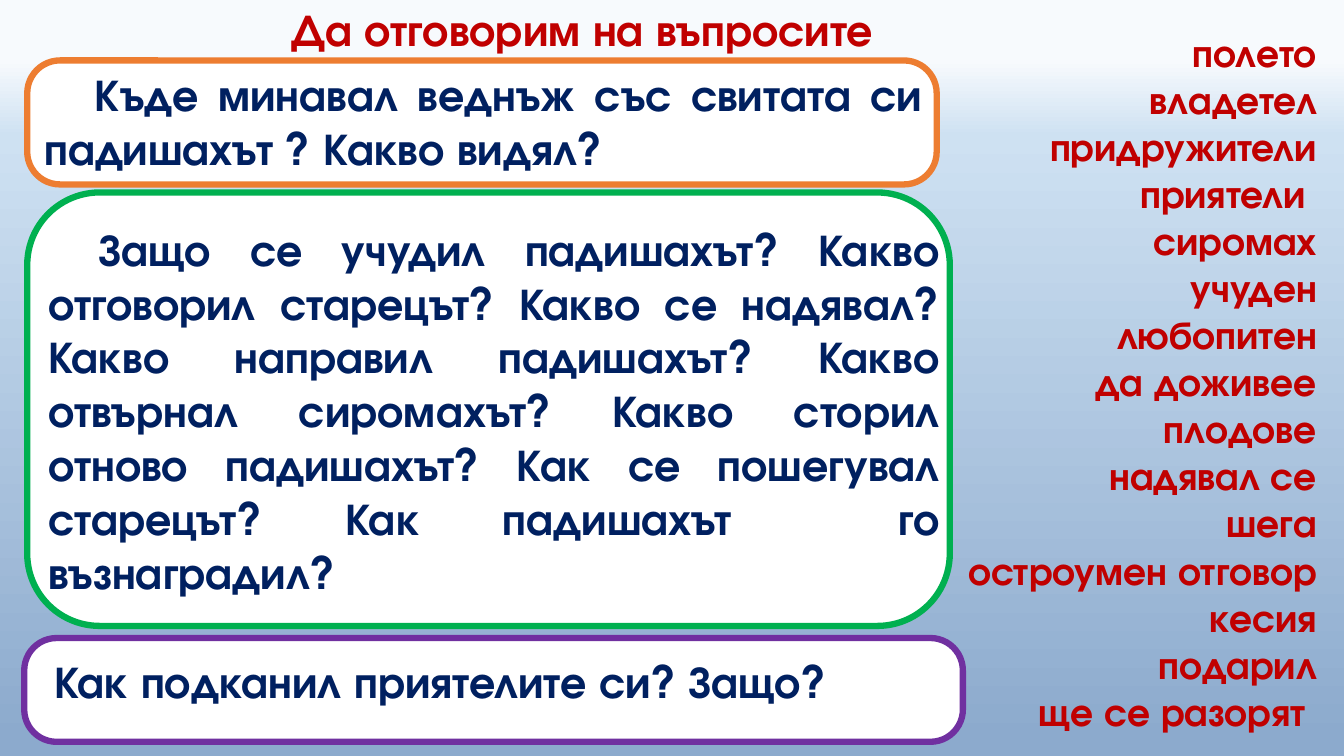
from lxml import etree
from pptx import Presentation
from pptx.dml.color import RGBColor
from pptx.enum.shapes import MSO_SHAPE
from pptx.enum.text import PP_ALIGN
from pptx.oxml.ns import qn
from pptx.util import Inches, Pt

FONT = "TeX Gyre Adventor"
RED = RGBColor(0xC0, 0x00, 0x00)
NAVY = RGBColor(0x00, 0x20, 0x60)
WHITE = RGBColor(0xFF, 0xFF, 0xFF)
ORANGE = RGBColor(0xED, 0x7D, 0x31)
GREEN = RGBColor(0x00, 0xB0, 0x50)
PURPLE = RGBColor(0x70, 0x30, 0xA0)
SKY = [(8, RGBColor(0xF7, 0xFA, 0xFD)),
       (18, RGBColor(0xCE, 0xE1, 0xF2)),
       (98, RGBColor(0x8C, 0xAA, 0xCD))]

TITLE = "Да отговорим на въпросите "

# frame box, corner, line colour, text box, alignment, question
QUESTIONS = [
    ((0.27, 0.6, 9.02, 1.23), 0.264, ORANGE, (0.34, 0.61, 8.91, 1.18),
     PP_ALIGN.JUSTIFY,
     "\tКъде минавал веднъж със свитата си падишахът ? Какво видял?"),
    ((0.27, 1.91, 9.15, 4.3), 0.167, GREEN, (0.38, 2.15, 9.04, 3.33),
     PP_ALIGN.JUSTIFY,
     "\tЗащо се учудил падишахът? Какво отговорил старецът? "
     "Какво се надявал? Какво направил падишахът? "
     "Какво отвърнал сиромахът? Какво сторил отново падишахът? "
     "Как се пошегувал старецът? Как падишахът  го възнаградил?"),
    ((0.24, 6.33, 9.31, 1.03), 0.312, PURPLE, (-0.06, 6.44, 9.7, 0.64),
     PP_ALIGN.LEFT,
     "\tКак подканил приятелите си? Защо?"),
]

# \v is a line break inside a paragraph
WORDS = [
    "полето\vвладетел придружители приятели ",
    "сиромах\vучуден",
    "любопитен",
    "да доживее",
    "плодове",
    "надявал се\vшега",
    "остроумен отговор\vкесия\vподарил",
    "ще се разорят ",
]


def paint_background(s):
    fill = s.background.fill
    fill.gradient()
    fill.gradient_angle = 270
    stops = s.background._cSld.find(".//" + qn("a:gsLst"))
    for stop in list(stops):
        stops.remove(stop)
    for percent, color in SKY:
        stop = etree.SubElement(stops, qn("a:gs"), pos=str(percent * 1000))
        etree.SubElement(stop, qn("a:srgbClr"), val=str(color))


def add_text(s, box, paragraphs, size, color, align):
    tf = s.shapes.add_textbox(*map(Inches, box)).text_frame
    tf.word_wrap = True
    tf.text = "\n".join(paragraphs)
    for p in tf.paragraphs:
        p.alignment = align
        for r in p.runs:
            r.font.name = FONT
            r.font.size = Pt(size)
            r.font.bold = True
            r.font.color.rgb = color


def add_frame(s, box, corner, color):
    sp = s.shapes.add_shape(MSO_SHAPE.ROUNDED_RECTANGLE, *map(Inches, box))
    sp.adjustments[0] = corner
    sp.shadow.inherit = False
    sp.fill.solid()
    sp.fill.fore_color.rgb = WHITE
    sp.line.color.rgb = color
    sp.line.width = Pt(4.5)


def main():
    prs = Presentation()
    prs.slide_width, prs.slide_height = Inches(13.33), Inches(7.5)
    s = prs.slides.add_slide(prs.slide_layouts[6])
    paint_background(s)
    add_text(s, (2.44, -0.03, 6.8, 0.64), [TITLE], 32, RED, PP_ALIGN.CENTER)
    for frame, corner, color, box, align, question in QUESTIONS:
        add_frame(s, frame, corner, color)
        add_text(s, box, [question], 32, NAVY, align)
    add_text(s, (9.01, 0.23, 4.15, 7.17), WORDS, 28, RED, PP_ALIGN.RIGHT)
    prs.save("out.pptx")


if __name__ == "__main__":
    main()
